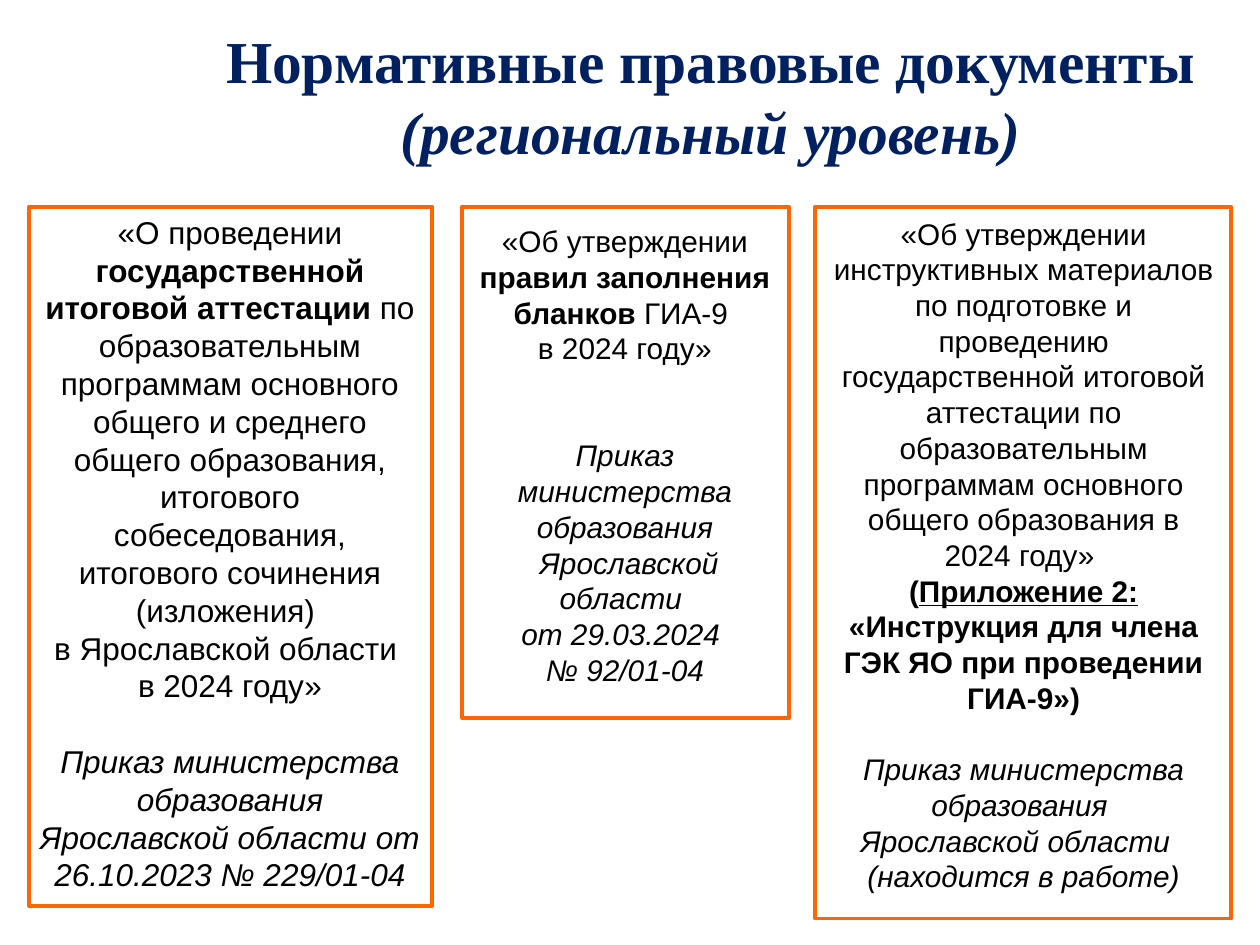
from dataclasses import dataclass

from pptx import Presentation
from pptx.dml.color import RGBColor
from pptx.enum.shapes import MSO_SHAPE
from pptx.enum.text import MSO_ANCHOR, PP_ALIGN
from pptx.util import Inches, Pt


@dataclass
class Theme:
    serif: str = "Times New Roman"
    sans: str = "Arial"
    navy: RGBColor = RGBColor(0x00, 0x20, 0x60)
    black: RGBColor = RGBColor(0, 0, 0)
    orange: RGBColor = RGBColor(0xFF, 0x66, 0x00)
    head: int = 34
    large: int = 18
    body: int = 17
    line: float = 2.25


class Deck:
    def __init__(self, theme):
        self.theme = theme
        self.file = Presentation()
        self.file.slide_width = Inches(10)
        self.file.slide_height = Inches(7.5)
        self.slide = self.file.slides.add_slide(self.file.slide_layouts[5])

    def place(self, shape, box):
        shape.left, shape.top, shape.width, shape.height = map(Inches, box)

    def fill(self, para, runs, face, size, color):
        para.alignment = PP_ALIGN.CENTER
        font = para.font
        font.name, font.size, font.color.rgb = face, Pt(size), color
        styles = {style for _, style in runs}
        shared = styles.pop() if len(styles) == 1 else ""
        self.style(font, shared)
        for text, style in runs:
            run = para.add_run()
            run.text = text
            if style != shared:
                self.style(run.font, style)

    def style(self, font, marks):
        if "b" in marks:
            font.bold = True
        if "i" in marks:
            font.italic = True
        if "u" in marks:
            font.underline = True

    def title(self, box, runs):
        shape = self.slide.shapes.title
        self.place(shape, box)
        frame = shape.text_frame
        frame.word_wrap = True
        frame.vertical_anchor = MSO_ANCHOR.MIDDLE
        look = self.theme
        self.fill(frame.paragraphs[0], runs, look.serif, look.head, look.navy)

    def frame(self, box):
        shape = self.slide.shapes.add_shape(
            MSO_SHAPE.RECTANGLE, *map(Inches, box))
        shape.shadow.inherit = False
        shape.fill.background()
        shape.line.color.rgb = self.theme.orange
        shape.line.width = Pt(self.theme.line)

    def text(self, box, size, gap, parts, order):
        frame = self.slide.shapes.add_textbox(*map(Inches, box)).text_frame
        frame.word_wrap = True
        look = self.theme
        lines = parts + [[(line, "i")] for line in order]
        for num, runs in enumerate(lines):
            para = frame.add_paragraph() if num else frame.paragraphs[0]
            self.fill(para, runs, look.sans, size, look.black)
            if num == len(parts):
                para.space_before = Pt(gap)


def main():
    theme = Theme()
    deck = Deck(theme)
    deck.title((1.26, 0.13, 8.76, 1.25), [
        ("Нормативные правовые документы ", "b"),
        ("(региональный уровень)", "bi"),
    ])
    top = 1.64
    for left, width, height in (
            (0.23, 3.2, 5.55), (3.67, 2.59, 4.06), (6.47, 3.3, 5.65)):
        deck.frame((left, top, width, height))

    deck.text((0.22, top, 3.21, 5.55), theme.large, 21.6, [
        [("«О проведении ", ""),
         ("государственной итоговой аттестации ", "b"),
         ("по образовательным программам основного общего и среднего "
          "общего образования, итогового собеседования, итогового "
          "сочинения (изложения) ", "")],
        [("в Ярославской области ", "")],
        [("в 2024 году»", "")],
    ], ["Приказ министерства образования Ярославской области от ",
        "26.10.2023 № 229/01-04"])

    deck.text((3.67, 1.72, 2.58, 3.82), theme.body, 40.8, [
        [("«Об утверждении ", ""),
         ("правил заполнения бланков", "b"),
         (" ГИА-9 ", "")],
        [("в 2024 году»", "")],
    ], ["Приказ министерства образования", " Ярославской области ",
        "от 29.03.2024 ", "№ 92/01-04"])

    deck.text((6.51, 1.66, 3.23, 5.54), theme.body, 20.4, [
        [("«Об утверждении инструктивных материалов по подготовке и "
          "проведению государственной итоговой аттестации по "
          "образовательным программам основного общего образования "
          "в 2024 году» ", "")],
        [("(", "b"), ("Приложение 2:", "bu"),
         (" «Инструкция для члена ГЭК ЯО при проведении ГИА-9»)", "b")],
    ], ["Приказ министерства", "образования ", "Ярославской области  ",
        "(находится в работе)"])
    deck.file.save("out.pptx")


if __name__ == "__main__":
    main()
